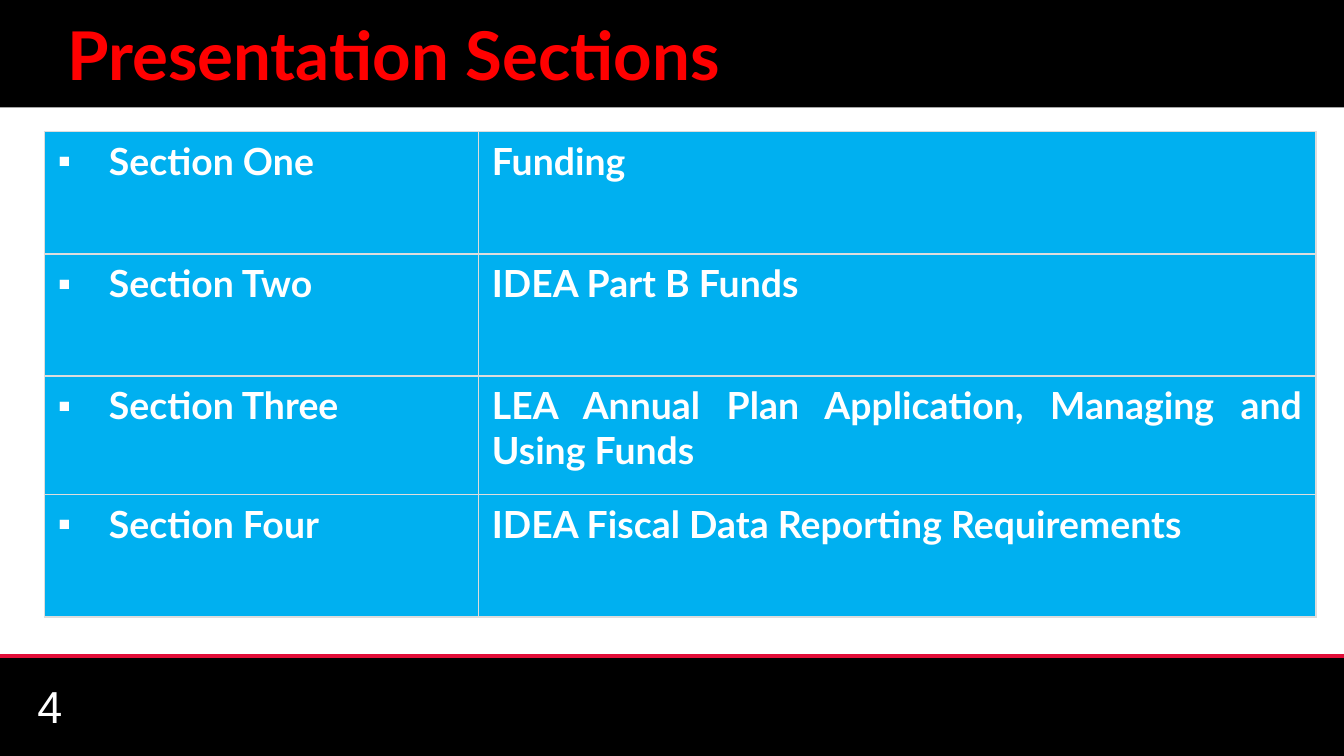
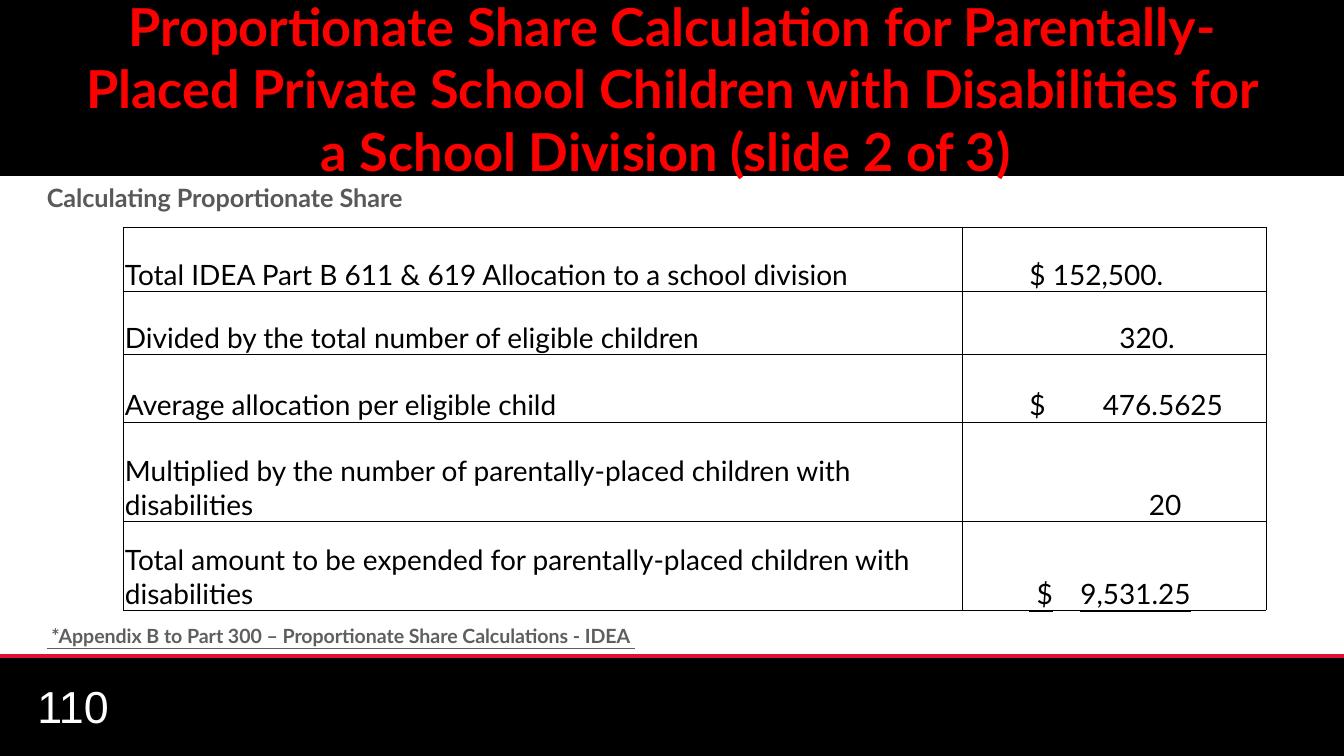
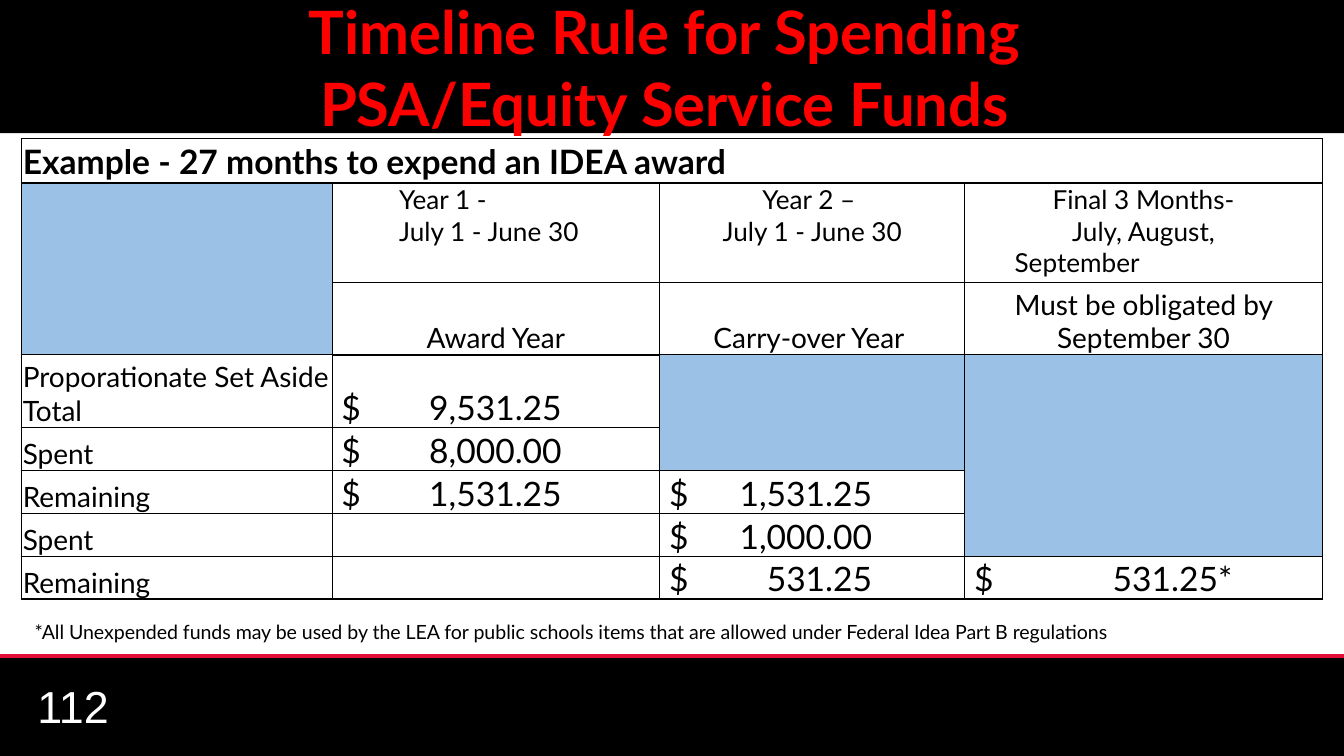
from dataclasses import dataclass, replace
from itertools import product

from lxml import etree
from pptx import Presentation
from pptx.dml.color import RGBColor
from pptx.enum.shapes import MSO_CONNECTOR, MSO_SHAPE
from pptx.enum.text import MSO_ANCHOR, PP_ALIGN
from pptx.oxml.ns import qn
from pptx.util import Inches, Pt

LEFT, CENTER, JUSTIFY = PP_ALIGN.LEFT, PP_ALIGN.CENTER, PP_ALIGN.JUSTIFY
TOP, MIDDLE, BOTTOM = MSO_ANCHOR.TOP, MSO_ANCHOR.MIDDLE, MSO_ANCHOR.BOTTOM
RECTANGLE, STRAIGHT = MSO_SHAPE.RECTANGLE, MSO_CONNECTOR.STRAIGHT


@dataclass(frozen=True)
class Style:
    size: float
    color: str = "000000"
    bold: bool = False
    underline: bool = False
    font: str = "Lato"


@dataclass(frozen=True)
class Theme:
    black: str = "000000"
    rule: str = "E20D38"
    grid: str = "DDDDDD"
    section_fill: str = "00B0F0"
    blocked_fill: str = "9BC2E6"
    bullet_font: str = "Arial"
    title: Style = Style(36, "FF0000", bold=True)
    page: Style = Style(24, "FFFFFF", font="Arial")
    section: Style = Style(20, "FFFFFF", bold=True)
    caption: Style = Style(13.5, "595959", bold=True)
    source: Style = Style(10.5, "5F5F5F", bold=True, underline=True)
    note: Style = Style(10.5)
    body: Style = Style(15)
    total: Style = Style(15, underline=True)
    period: Style = Style(14)
    amount: Style = Style(18)
    example: Style = Style(18, bold=True)


THEME = Theme()


@dataclass(frozen=True)
class Line:
    text: str
    style: Style = THEME.body
    align: PP_ALIGN = LEFT
    indent: float = 0
    bullet: str = ""
    tab: float = 0
    before: float = 0


@dataclass(frozen=True)
class Cell:
    lines: tuple[Line, ...] = ()
    fill: str = ""
    anchor: MSO_ANCHOR = BOTTOM
    left: float = 0.01
    span: tuple[int, int] = (1, 1)
    heavy: str = ""
    bare: str = ""


@dataclass(frozen=True)
class Grid:
    left: float
    top: float
    columns: tuple[float, ...]
    rows: tuple[float, ...]
    cells: list
    border: str = THEME.black
    inner: float = 0.5
    outer: float = 0.5
    inset_right: float = 0.01
    inset_top: float = 0.01


def color(value: str) -> RGBColor:
    return RGBColor.from_string(value)


def write(frame, lines: tuple[Line, ...]) -> None:
    for index, line in enumerate(lines):
        paragraph = frame.add_paragraph() if index else frame.paragraphs[0]
        paragraph.text = line.text
        paragraph.alignment = line.align
        if line.before:
            paragraph.space_before = Pt(line.before)
        properties = paragraph._p.get_or_add_pPr()
        if line.indent:
            properties.set("marL", str(Inches(line.indent)))
        if line.bullet:
            properties.set("indent", str(-Inches(line.indent)))
            etree.SubElement(properties, qn("a:buFont"), typeface=THEME.bullet_font)
            etree.SubElement(properties, qn("a:buChar"), char=line.bullet)
        if line.tab:
            stops = etree.SubElement(properties, qn("a:tabLst"))
            etree.SubElement(stops, qn("a:tab"), pos=str(Inches(line.tab)), algn="r")
        for run in paragraph.runs:
            run.font.name = line.style.font
            run.font.size = Pt(line.style.size)
            run.font.bold = line.style.bold
            run.font.underline = line.style.underline
            run.font.color.rgb = color(line.style.color)


def add_band(slide, left: float, top: float, width: float, height: float):
    band = slide.shapes.add_shape(
        RECTANGLE, Inches(left), Inches(top), Inches(width), Inches(height))
    band.shadow.inherit = False
    band.fill.solid()
    band.fill.fore_color.rgb = color(THEME.black)
    band.line.fill.background()
    return band


def add_text(slide, left: float, top: float, width: float, height: float,
             *lines: Line, anchor: MSO_ANCHOR = TOP) -> None:
    box = slide.shapes.add_textbox(
        Inches(left), Inches(top), Inches(width), Inches(height))
    box.text_frame.word_wrap = True
    box.text_frame.vertical_anchor = anchor
    write(box.text_frame, lines)


def add_page(deck, page: str, title: str, title_height: float, size: float,
             align: PP_ALIGN = CENTER):
    slide = deck.slides.add_slide(deck.slide_layouts[6])
    add_band(slide, -0.28, 4.88, 10.56, 0.75)
    rule = slide.shapes.add_connector(
        STRAIGHT, Inches(-0.29), Inches(4.88), Inches(10.28), Inches(4.88))
    rule.line.color.rgb = color(THEME.rule)
    rule.line.width = Pt(2)
    etree.SubElement(rule._element.spPr, qn("a:effectLst"))
    add_text(slide, 0.18, 5.1, 2.33, 0.3, Line(page, THEME.page), anchor=MIDDLE)
    heading = add_band(slide, 0, 0, 10, title_height).text_frame
    heading.word_wrap = True
    heading.vertical_anchor = MIDDLE
    heading.margin_left = heading.margin_right = Inches(0.5)
    heading.margin_top = heading.margin_bottom = 0
    write(heading, (Line(title, replace(THEME.title, size=size), align),))
    return slide


def draw_borders(target, grid: Grid, cell: Cell, row: int, column: int) -> None:
    on_edge = {
        "l": column == 0,
        "r": column == len(grid.columns) - 1,
        "t": row == 0,
        "b": row == len(grid.rows) - 1,
    }
    properties = target._tc.get_or_add_tcPr()
    for side, outside in on_edge.items():
        width = grid.outer if outside else 1 if side in cell.heavy else grid.inner
        border = etree.SubElement(
            properties, qn(f"a:ln{side.upper()}"), w=str(Pt(width)))
        if side in cell.bare:
            etree.SubElement(border, qn("a:noFill"))
        else:
            fill = etree.SubElement(border, qn("a:solidFill"))
            etree.SubElement(fill, qn("a:srgbClr"), val=grid.border)


def add_grid(slide, grid: Grid) -> None:
    table = slide.shapes.add_table(
        len(grid.rows), len(grid.columns), Inches(grid.left), Inches(grid.top),
        Inches(sum(grid.columns)), Inches(sum(grid.rows))).table
    table.first_row = table.horz_banding = False
    for column, width in zip(table.columns, grid.columns):
        column.width = Inches(width)
    for row, height in zip(table.rows, grid.rows):
        row.height = Inches(height)
    for row, row_cells in enumerate(grid.cells):
        for column, cell in enumerate(row_cells):
            if cell is None:
                continue
            down, across = cell.span
            for r, c in product(range(row, row + down), range(column, column + across)):
                covered = table.cell(r, c)
                covered.margin_left = Inches(cell.left)
                covered.margin_right = Inches(grid.inset_right)
                covered.margin_top = Inches(grid.inset_top)
                covered.margin_bottom = 0
                covered.vertical_anchor = cell.anchor
                draw_borders(covered, grid, cell, r, c)
                if cell.fill:
                    covered.fill.solid()
                    covered.fill.fore_color.rgb = color(cell.fill)
                else:
                    covered.fill.background()
            origin = table.cell(row, column)
            if cell.span != (1, 1):
                origin.merge(table.cell(row + down - 1, column + across - 1))
            write(origin.text_frame, cell.lines)


def section_cell(text: str, align: PP_ALIGN = JUSTIFY, bullet: str = "") -> Cell:
    line = Line(text, THEME.section, align, 0.38 if bullet else 0, bullet)
    return Cell((line,), THEME.section_fill, TOP, left=0.1)


def label(text: str, align: PP_ALIGN = LEFT, heavy: str = "") -> Cell:
    return Cell((Line(text, align=align),), heavy=heavy)


def figure(text: str, align: PP_ALIGN = LEFT, left: float = 0.5, tab: float = 0,
           style: Style = THEME.body) -> Cell:
    return Cell((Line(text, style, align, tab=tab),), left=left)


def amount(value: str, tab: float, heavy: str = "") -> Cell:
    line = Line(f"$\t{value}", THEME.amount, tab=tab)
    return Cell((line,), left=0.07, heavy=heavy)


def period(*texts: str, align: PP_ALIGN = CENTER, left: float = 0.01) -> Cell:
    lines = tuple(Line(text, THEME.period, align) for text in texts)
    return Cell(lines, anchor=TOP, left=left, heavy="t")


def add_sections(deck) -> None:
    slide = add_page(deck, "4", "Presentation Sections", 0.8, 36, LEFT)
    sections = [
        ("Section One", "Funding", JUSTIFY),
        ("Section Two", "IDEA Part B Funds", JUSTIFY),
        ("Section Three ", "LEA Annual Plan Application, Managing and Using Funds ", JUSTIFY),
        ("Section Four ", "IDEA Fiscal Data Reporting Requirements", LEFT),
    ]
    cells = [[section_cell(name, bullet="▪"), section_cell(topic, align)]
             for name, topic, align in sections]
    add_grid(slide, Grid(
        0.33, 0.98, (3.23, 6.23), (0.91, 0.91, 0.88, 0.91), cells,
        border=THEME.grid, inner=1, outer=1, inset_right=0.1, inset_top=0.05))


def add_share_calculation(deck) -> None:
    slide = add_page(
        deck, "110",
        "Proportionate Share Calculation for Parentally-Placed Private School "
        "Children with Disabilities for a School Division (slide 2 of 3) ", 1.31, 28)
    add_text(
        slide, 0.25, 1.31, 7.36, 3.47,
        Line("Calculating Proportionate Share", THEME.caption),
        Line(" *Appendix B to Part 300 – Proportionate Share Calculations - IDEA ",
             THEME.source, before=220))
    steps = [
        ("Total IDEA Part B 611 & 619 Allocation to a school division",
         figure("$ 152,500.")),
        ("Divided by the total number of eligible children", figure("320.", CENTER)),
        ("Average allocation per eligible child", figure("$\t476.5625", tab=1.44)),
        ("Multiplied by the number of parentally-placed children with disabilities",
         figure("20", CENTER, left=0.77)),
        ("Total amount to be expended for parentally-placed children with disabilities",
         figure(" $\t9,531.25", tab=1.2, style=THEME.total)),
    ]
    add_grid(slide, Grid(
        0.92, 1.69, (6.24, 2.26), (0.48, 0.47, 0.5, 0.74, 0.66),
        [[label(step), result] for step, result in steps]))


def add_timeline(deck) -> None:
    slide = add_page(
        deck, "112", "Timeline Rule for Spending \vPSA/Equity Service Funds ", 0.99, 32)
    award, carry_over, final = 1.64, 1.51, 1.92
    blocked = Cell(fill=THEME.blocked_fill)
    last_months = Cell((
        Line("Final 3 Months-", THEME.period, CENTER),
        Line("July, August,", THEME.period, CENTER),
        Line("September", THEME.period, indent=0.36),
    ), anchor=TOP, heavy="t")
    example = Cell((Line("Example - 27 months to expend an IDEA award", THEME.example),),
                   anchor=MIDDLE, span=(1, 4), heavy="lrtb")
    cells = [
        [example, None, None, None],
        [replace(blocked, heavy="t", bare="b"),
         period("Year 1 -", "July 1 - June 30", align=LEFT, left=0.5),
         period("Year 2 – ", "July 1 - June 30"), last_months],
        [replace(blocked, bare="t"), label("Award Year", CENTER, heavy="b"),
         label("Carry-over Year ", CENTER),
         label("Must be obligated by September 30", CENTER)],
        [label("Proporationate Set Aside Total"), amount("9,531.25", award, heavy="t"),
         replace(blocked, span=(2, 1)), replace(blocked, span=(4, 1))],
        [label("Spent"), amount("8,000.00", award), None, None],
        [label("Remaining"), amount("1,531.25", award),
         amount("1,531.25", carry_over), None],
        [label("Spent"), Cell(), amount("1,000.00", carry_over), None],
        [label("Remaining"), Cell(), amount("531.25", carry_over),
         amount("531.25*", final)],
    ]
    add_grid(slide, Grid(
        0.16, 1.03, (2.31, 2.44, 2.27, 2.66),
        (0.33, 0.74, 0.54, 0.54) + (0.32,) * 4, cells, outer=1))
    add_text(
        slide, 0.16, 4.51, 9.2, 0.33,
        Line("*All Unexpended funds may be used by the LEA for public schools items "
             "that are allowed under Federal Idea Part B regulations ", THEME.note),
        anchor=BOTTOM)


def main() -> None:
    deck = Presentation()
    deck.slide_width = Inches(10)
    deck.slide_height = deck.slide_width * 9 // 16
    add_sections(deck)
    add_share_calculation(deck)
    add_timeline(deck)
    deck.save("out.pptx")


if __name__ == "__main__":
    main()
